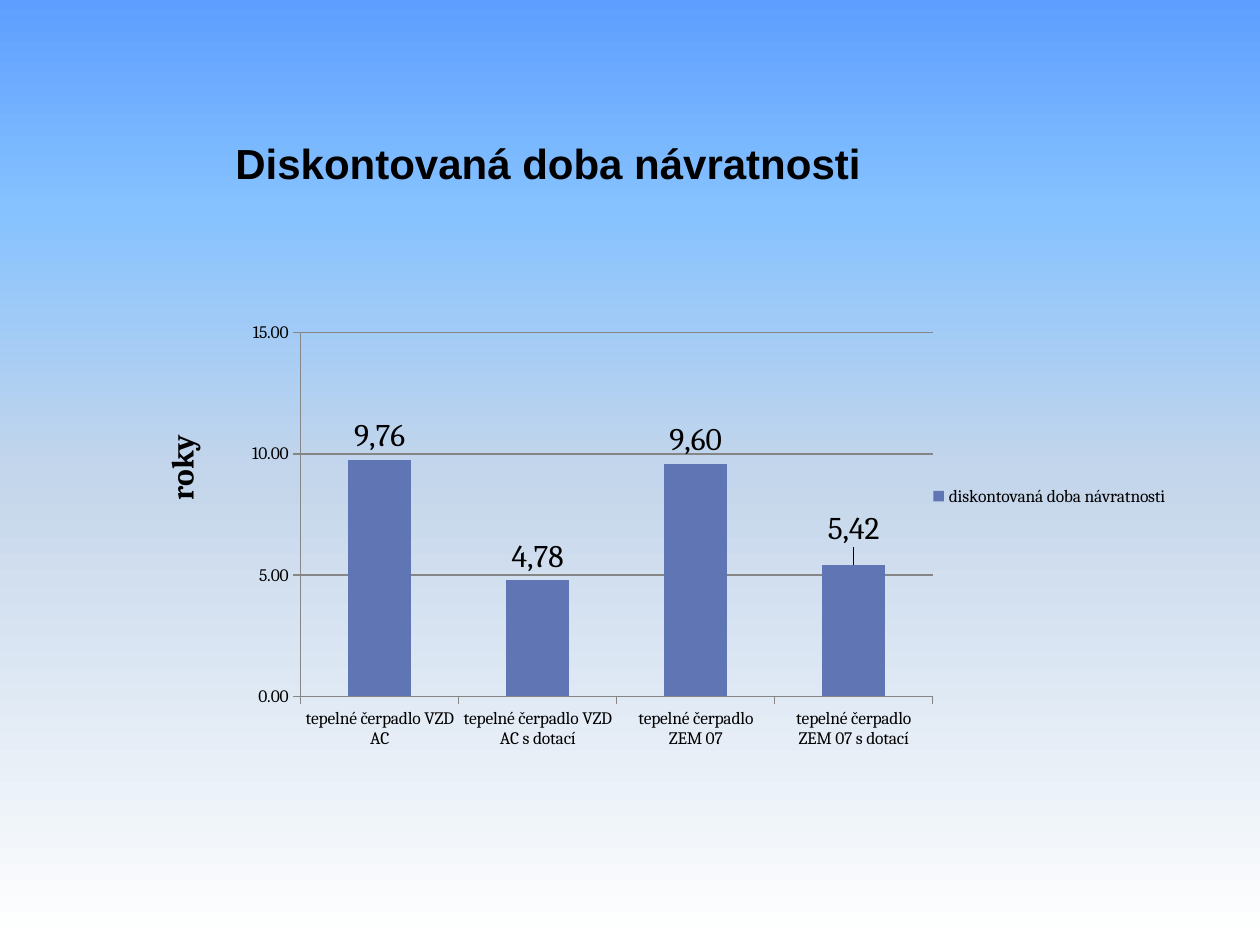
from lxml.etree import SubElement
from pptx import Presentation
from pptx.chart.data import CategoryChartData
from pptx.dml.color import RGBColor
from pptx.enum.chart import (XL_CHART_TYPE, XL_LABEL_POSITION, XL_LEGEND_POSITION,
                             XL_TICK_LABEL_POSITION, XL_TICK_MARK)
from pptx.oxml.ns import qn
from pptx.util import Pt

PX = 914400 / 126


def style(font, size, name="Cambria", bold=False):
    font.size, font.name, font.bold = Pt(size), name, bold
    font.color.rgb = RGBColor.from_string("000000")


def place(parent, index, **values):
    """Give a chart part a manual layout, inserted at its schema position."""
    for old in parent.findall(qn("c:layout")):
        parent.remove(old)
    layout = parent.makeelement(qn("c:layout"))
    parent.insert(index, layout)
    manual = SubElement(layout, qn("c:manualLayout"))
    for tag, value in values.items():
        SubElement(manual, qn(f"c:{tag}")).set("val", str(value))


prs = Presentation()
prs.slide_width, prs.slide_height = int(1260 * PX), int(945 * PX)
s = prs.slides.add_slide(prs.slide_layouts[6])

# Background gradient, top to bottom
s.background.fill.gradient()
grad = next(s._element.iter(qn("a:gradFill")))
for child in list(grad):
    grad.remove(child)
stops = SubElement(grad, qn("a:gsLst"))
for percent, color in [(0, "5E9EFF"), (22, "85C2FF"), (50, "C4D6EB"), (100, "FFFFFF")]:
    stop = SubElement(stops, qn("a:gs"), pos=str(percent * 1000))
    SubElement(stop, qn("a:srgbClr"), val=color)
SubElement(grad, qn("a:lin"), ang="5400000", scaled="0")

# Chart
data = CategoryChartData(number_format="#,##0.00")
data.categories = ["tepelné čerpadlo VZD AC", "tepelné čerpadlo VZD AC s dotací",
                   "tepelné čerpadlo ZEM 07", "tepelné čerpadlo ZEM 07 s dotací"]
payback = [9.76, 4.78, 9.60, 5.42]
data.add_series("diskontovaná doba návratnosti", payback)
frame = s.shapes.add_chart(XL_CHART_TYPE.COLUMN_CLUSTERED, int(123 * PX), int(204 * PX),
                           int(1071 * PX), int(625 * PX), data)
chart = frame.chart
style(chart.font, 10)
chart.has_title = False
place(chart._chartSpace.chart.plotArea, 0, layoutTarget="inner", xMode="edge", yMode="edge",
      x=0.166, y=0.206, w=0.59, h=0.582)

chart.has_legend = True
chart.legend.position = XL_LEGEND_POSITION.RIGHT
chart.legend.include_in_layout = False
place(chart.legend._element, 1, xMode="edge", yMode="edge", x=0.75, y=0.445, w=0.23, h=0.045)

years = chart.value_axis
years.minimum_scale, years.maximum_scale, years.major_unit = 0, 15, 5
years.has_major_gridlines = True
years.tick_labels.number_format = "#,##0.00"
years.tick_labels.number_format_is_linked = False
title = years.axis_title
title.text_frame.text = "roky"
style(title.text_frame.paragraphs[0].runs[0].font, 18, bold=True)
next(title._element.iter(qn("a:bodyPr"))).set("rot", "-5400000")
place(title._element, 1, xMode="edge", yMode="edge", x=0.03, y=0.36)

chart.category_axis.tick_label_position = XL_TICK_LABEL_POSITION.LOW
for axis in (years, chart.category_axis):
    axis.major_tick_mark = XL_TICK_MARK.OUTSIDE
    axis.minor_tick_mark = XL_TICK_MARK.NONE
for line in (years.format.line, chart.category_axis.format.line, years.major_gridlines.format.line):
    line.color.rgb = RGBColor.from_string("868686")
    line.width = Pt(0.75)

plot = chart.plots[0]
plot.gap_width = 150
plot.vary_by_categories = False
bars = plot.series[0]
bars.format.fill.solid()
bars.format.fill.fore_color.rgb = RGBColor.from_string("6076B4")
labels = bars.data_labels
labels.show_value = True
labels.number_format = "#,##0.00"
labels.number_format_is_linked = False
labels.position = XL_LABEL_POSITION.OUTSIDE_END
style(labels.font, 18)
for i, value in enumerate(payback):
    label = bars.points[i].data_label
    label.text_frame.text = f"{value:.2f}".replace(".", ",")
    style(label.text_frame.paragraphs[0].runs[0].font, 18)
    label.position = XL_LABEL_POSITION.OUTSIDE_END
last_label = labels._element.findall(qn("c:dLbl"))[-1]
place(last_label, 1, x=0, y=-0.02)

# Heading
sp = s.shapes.add_textbox(int(223 * PX), int(131 * PX), int(843 * PX), int(63 * PX))
tf = sp.text_frame
tf.word_wrap = True
tf.text = "Diskontovaná doba návratnosti"
style(tf.paragraphs[0].runs[0].font, 24, "Arial", True)

prs.save("out.pptx")
